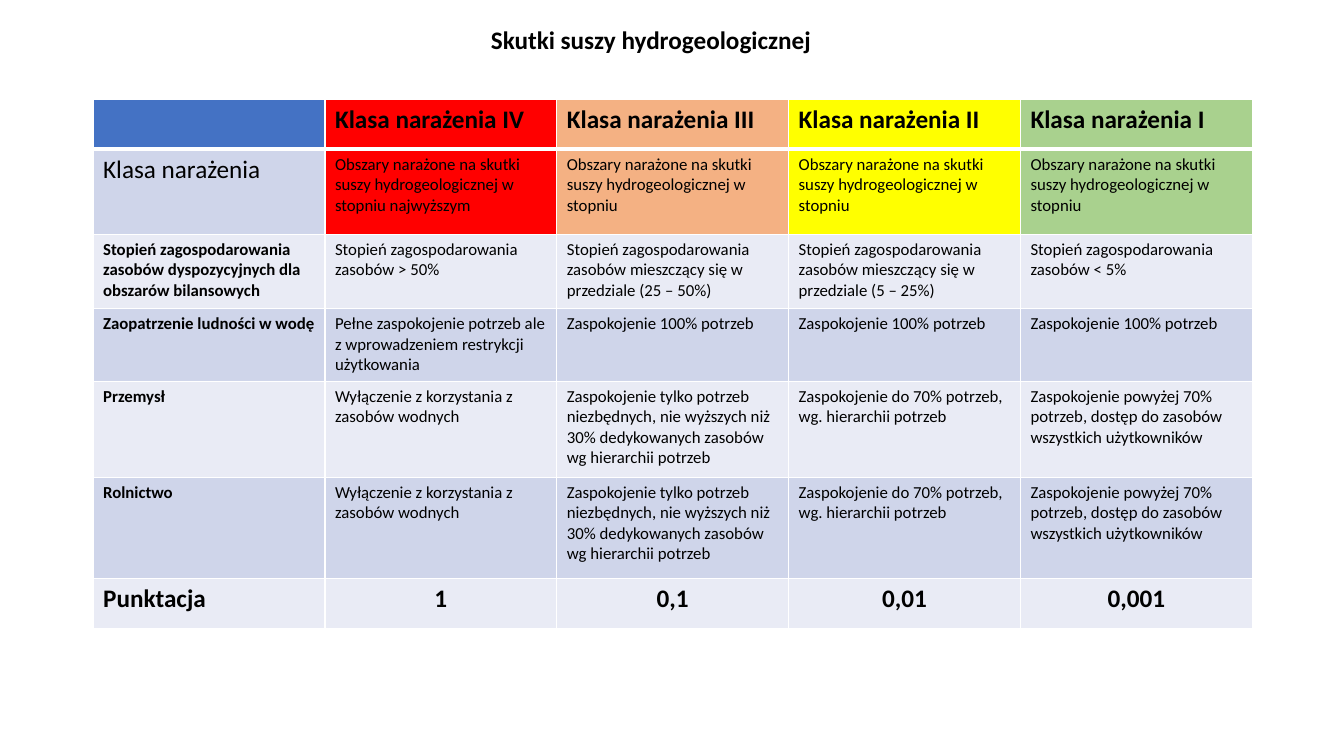
from lxml import etree
from pptx import Presentation
from pptx.dml.color import RGBColor
from pptx.enum import text
from pptx.oxml.ns import qn
from pptx.util import Pt

FONT = "Calibri"
BLACK, WHITE, BLUE = "000000", "FFFFFF", "4472C4"
BANDS = ["E9EBF5", "CFD5EA"]
CLASS_COLORS = ["FF0000", "F4B183", "FFFF00", "A9D18E"]
ROW_HEIGHTS = [35.5, 61, 53, 52, 68.5, 72.5, 35.5]

AREA = "Obszary narażone na skutki suszy hydrogeologicznej w stopniu"
USE = "Stopień zagospodarowania zasobów"
FULL = "Zaspokojenie 100% potrzeb"
LIMITS = [
    "Wyłączenie z korzystania z zasobów wodnych",
    "Zaspokojenie tylko potrzeb niezbędnych, nie wyższych niż 30% "
    "dedykowanych zasobów wg hierarchii potrzeb",
    "Zaspokojenie do 70% potrzeb, wg. hierarchii potrzeb",
    "Zaspokojenie powyżej 70% potrzeb, dostęp do zasobów wszystkich użytkowników",
]
ROWS = [
    [""] + [f"Klasa narażenia {n}" for n in ("IV", "III", "II", "I")],
    ["Klasa narażenia", f"{AREA} najwyższym", AREA, AREA, AREA],
    ["Stopień zagospodarowania zasobów dyspozycyjnych dla obszarów bilansowych",
     f"{USE} > 50%",
     f"{USE} mieszczący się w przedziale (25 – 50%)",
     f"{USE} mieszczący się w przedziale (5 – 25%)",
     f"{USE} < 5%"],
    ["Zaopatrzenie ludności w wodę",
     "Pełne zaspokojenie potrzeb ale z wprowadzeniem restrykcji użytkowania",
     FULL, FULL, FULL],
    ["Przemysł"] + LIMITS,
    ["Rolnictwo"] + LIMITS,
    ["Punktacja", "1", "0,1", "0,01", "0,001"],
]
LAST = len(ROWS) - 1


def rgb(color):
    return RGBColor.from_string(color)


def add_run(p, words, size, bold):
    r = p.add_run()
    r.text = words
    r.font.name = FONT
    r.font.size = Pt(size)
    r.font.bold = bold
    r.font.color.rgb = rgb(BLACK)


def set_borders(cell, widths):
    """Draw white borders; widths are left, right, top, bottom in points."""
    tc_pr = cell._tc.get_or_add_tcPr()
    for i, (side, width) in enumerate(zip("LRTB", widths)):
        ln = etree.Element(qn(f"a:ln{side}"), w=str(Pt(width)))
        fill = etree.SubElement(ln, qn("a:solidFill"))
        etree.SubElement(fill, qn("a:srgbClr"), val=WHITE)
        tc_pr.insert(i, ln)


def cell_color(row, col):
    if row < 2 and col:
        return CLASS_COLORS[col - 1]
    return BANDS[row % 2] if row else BLUE


def add_title(slide, x, y, w, h):
    tf = slide.shapes.add_textbox(Pt(x), Pt(y), Pt(w), Pt(h)).text_frame
    tf.word_wrap = True
    tf.vertical_anchor = text.MSO_ANCHOR.MIDDLE
    p = tf.paragraphs[0]
    p.alignment = text.PP_ALIGN.CENTER
    p.line_spacing = 0.9
    add_run(p, "Skutki suszy hydrogeologicznej", 18, True)


def add_exposure_table(slide, x, y, w):
    columns = len(ROWS[0])
    table = slide.shapes.add_table(len(ROWS), columns, Pt(x), Pt(y), Pt(w),
                                   Pt(sum(ROW_HEIGHTS))).table
    for column in table.columns:
        column.width = Pt(w / columns)
    for row, (height, entries) in enumerate(zip(ROW_HEIGHTS, ROWS)):
        table.rows[row].height = Pt(height)
        for col, words in enumerate(entries):
            cell = table.cell(row, col)
            cell.fill.solid()
            cell.fill.fore_color.rgb = rgb(cell_color(row, col))
            set_borders(cell, [1, 1, 3 if row == 1 else 1, 3 if row == 0 else 1])
            p = cell.text_frame.paragraphs[0]
            if row == LAST and col:
                p.alignment = text.PP_ALIGN.CENTER
            if words:
                large = row in (0, LAST) or (row, col) == (1, 0)
                bold = row in (0, LAST) or (col == 0 and row > 1)
                add_run(p, words, 18 if large else 12, bold)


def main():
    prs = Presentation()
    prs.slide_width, prs.slide_height = Pt(960), Pt(540)
    slide = prs.slides.add_slide(prs.slide_layouts[6])
    add_title(slide, 36.5, 16, 857, 27.5)
    add_exposure_table(slide, 66.5, 71, 828)
    prs.save("out.pptx")


if __name__ == "__main__":
    main()
